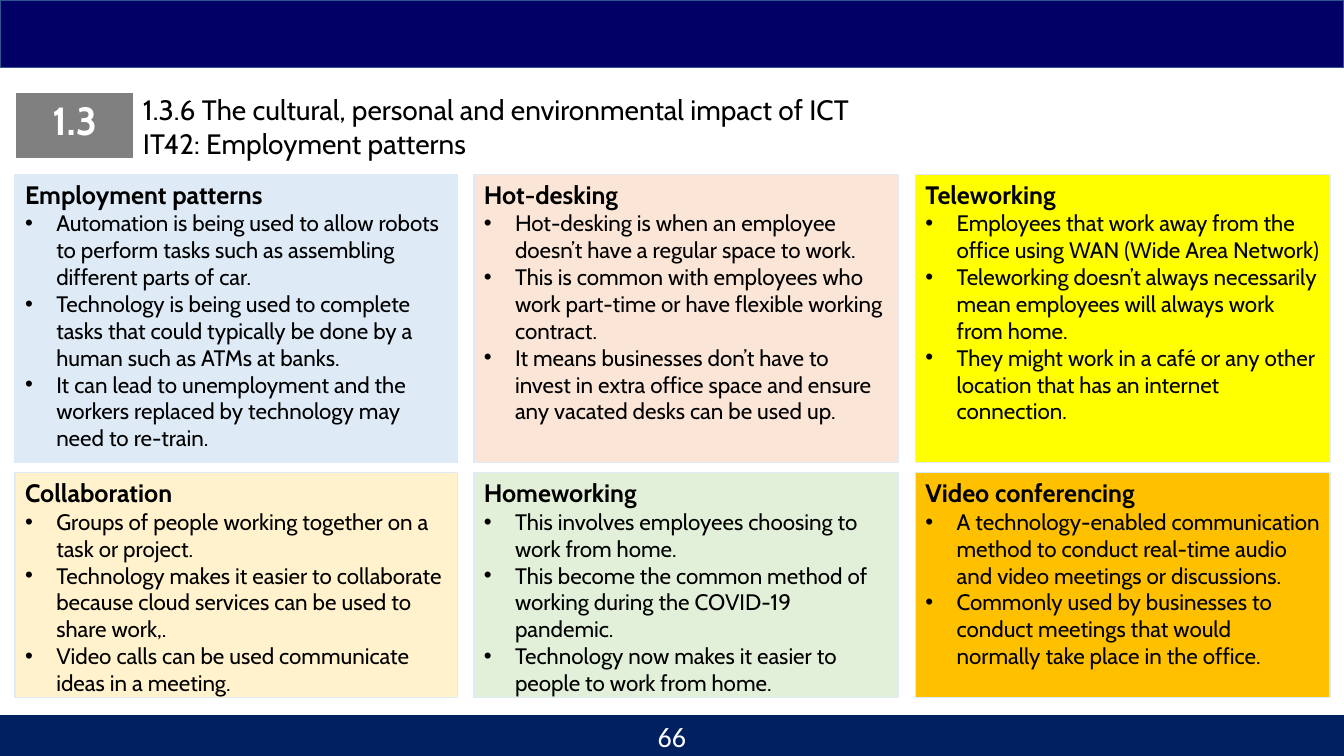
from dataclasses import dataclass

from lxml import etree
from pptx import Presentation
from pptx import util as u
from pptx.dml.color import RGBColor
from pptx.enum import shapes, text
from pptx.oxml.ns import qn


@dataclass(frozen=True)
class Theme:
    """Colours, fonts and type sizes of the slide."""
    font: str = "Cabin"
    number_font: str = "Calibri"
    banner: str = "000066"
    banner_edge: str = "325491"
    footer: str = "002060"
    badge: str = "808080"
    card_edge: str = "DEEBF7"
    ink: str = "000000"
    white: str = "FFFFFF"
    badge_size: int = 28
    title_size: int = 20
    heading_size: int = 18
    body_size: int = 16


T = Theme()
W, H = 13.33, 7.5
COLUMNS = [(0.15, 4.39), (4.7, 4.21), (9.08, 4.11)]
ROWS = [(1.73, 2.86), (4.69, 2.23)]
INDENT = 0.31

CARDS = [
    [("DEEBF7", "Employment patterns", [
        "Automation is being used to allow robots to perform tasks such as assembling different parts of car.",
        "Technology is being used to complete tasks that could typically be done by a human such as ATMs at banks.",
        "It can lead to unemployment and the workers replaced by technology may need to re-train."]),
     ("FBE5D6", "Hot-desking", [
        "Hot-desking is when an employee doesn’t have a regular space to work.",
        "This is common with employees who work part-time or have flexible working contract.",
        "It means businesses don’t have to invest in extra office space and ensure any vacated desks can be used up."]),
     ("FFFF00", "Teleworking", [
        "Employees that work away from the office using WAN (Wide Area Network)",
        "Teleworking doesn’t always necessarily mean employees will always work from home.",
        "They might work in a café or any other location that has an internet connection."])],
    [("FFF2CC", "Collaboration", [
        "Groups of people working together on a task or project.",
        "Technology makes it easier to collaborate because cloud services can be used to share work,.",
        "Video calls can be used communicate ideas in a meeting."]),
     ("E2F0D9", "Homeworking", [
        "This involves employees choosing to work from home.",
        "This become the common method of working during the COVID-19 pandemic.",
        "Technology now makes it easier to people to work from home."]),
     ("FFC000", "Video conferencing", [
        "A technology-enabled communication method to conduct real-time audio and video meetings or discussions.",
        "Commonly used by businesses to conduct meetings that would normally take place in the office."])],
]


def inches(box):
    """Turn a box of left, top, width and height into lengths."""
    return [u.Inches(v) for v in box]


def style(p, size, color, font=T.font, bold=False, align=text.PP_ALIGN.LEFT):
    """Format every run of a paragraph."""
    p.alignment = align
    for r in p.runs:
        r.font.name, r.font.size, r.font.bold = font, u.Pt(size), bold
        r.font.color.rgb = RGBColor.from_string(color)


def bullet(p):
    """Give a paragraph a hanging round bullet."""
    pPr = p._p.get_or_add_pPr()
    pPr.set("marL", str(u.Inches(INDENT)))
    pPr.set("indent", str(-u.Inches(INDENT)))
    etree.SubElement(pPr, qn("a:buFont")).set("typeface", "Arial")
    etree.SubElement(pPr, qn("a:buChar")).set("char", "•")


def panel(s, box, fill, edge):
    """Add a flat rectangle with a thin edge."""
    sp = s.shapes.add_shape(shapes.MSO_SHAPE.RECTANGLE, *inches(box))
    sp.shadow.inherit = False
    sp.fill.solid()
    sp.fill.fore_color.rgb = RGBColor.from_string(fill)
    sp.line.color.rgb = RGBColor.from_string(edge)
    sp.line.width = u.Pt(1)
    return sp


def label(s, box, lines, color, **look):
    """Add a wrapped text box with one paragraph per line."""
    tf = s.shapes.add_textbox(*inches(box)).text_frame
    tf.word_wrap = True
    tf.text = "\n".join(lines)
    for p in tf.paragraphs:
        style(p, T.title_size, color, **look)
    return tf


def strip(s, box, columns, fill, borders=None):
    """Add a one-row table of filled cells, with white borders if widths are given."""
    table = s.shapes.add_table(1, columns, *inches(box)).table
    table.first_row = table.horz_banding = False
    for cell in table.iter_cells():
        tcPr = cell._tc.get_or_add_tcPr()
        for i, side in enumerate("LRTB"):
            ln = etree.SubElement(tcPr, qn(f"a:ln{side}"))
            if borders:
                ln.set("w", str(u.Pt(borders[i])))
                solid = etree.SubElement(ln, qn("a:solidFill"))
                etree.SubElement(solid, qn("a:srgbClr")).set("val", T.white)
            else:
                etree.SubElement(ln, qn("a:noFill"))
        cell.fill.solid()
        cell.fill.fore_color.rgb = RGBColor.from_string(fill)
    return table


def header(s, box):
    """Place the banner, the section badge and the title."""
    x, y, w, h = box
    panel(s, (x, y, w, 0.67), T.banner, T.banner_edge)
    tf = label(s, (x + 1.32, y + 0.87, 8.5, h - 0.87),
               ["1.3.6 The cultural, personal and environmental impact of ICT",
                "IT42: Employment patterns"], T.ink)
    tf.auto_size = text.MSO_AUTO_SIZE.SHAPE_TO_FIT_TEXT
    badge = strip(s, (x + 0.15, y + 0.92, 1.18, 0.67), 1, T.badge, (1, 1, 1, 3))
    tf = badge.cell(0, 0).text_frame
    tf.text = "1.3"
    style(tf.paragraphs[0], T.badge_size, T.white, bold=True,
          align=text.PP_ALIGN.CENTER)


def card(s, box, fill, heading, points):
    """Place a coloured card with a heading and bulleted points."""
    tf = panel(s, box, fill, T.card_edge).text_frame
    tf.word_wrap = True
    tf.vertical_anchor = text.MSO_ANCHOR.TOP
    tf.text = heading
    style(tf.paragraphs[0], T.heading_size, T.ink, bold=True)
    for point in points:
        p = tf.add_paragraph()
        p.text = point
        bullet(p)
        style(p, T.body_size, T.ink)


def footer(s, box):
    """Place the footer band and the centred page number."""
    x, y, w, h = box
    strip(s, box, 3, T.footer)
    tf = label(s, (x + (w - 3) / 2, y + 0.01, 3, h - 0.01), ["66"], T.white,
               font=T.number_font, align=text.PP_ALIGN.CENTER)
    tf.vertical_anchor = text.MSO_ANCHOR.MIDDLE


def main():
    """Build the slide and save it."""
    prs = Presentation()
    prs.slide_width, prs.slide_height = u.Inches(W), u.Inches(H)
    s = prs.slides.add_slide(prs.slide_layouts[6])
    footer(s, (0, H - 0.41, W, 0.41))
    header(s, (0, 0, W, 1.64))
    for (y, h), row in zip(ROWS, CARDS):
        for (x, w), content in zip(COLUMNS, row):
            card(s, (x, y, w, h), *content)
    prs.save("out.pptx")


if __name__ == "__main__":
    main()
